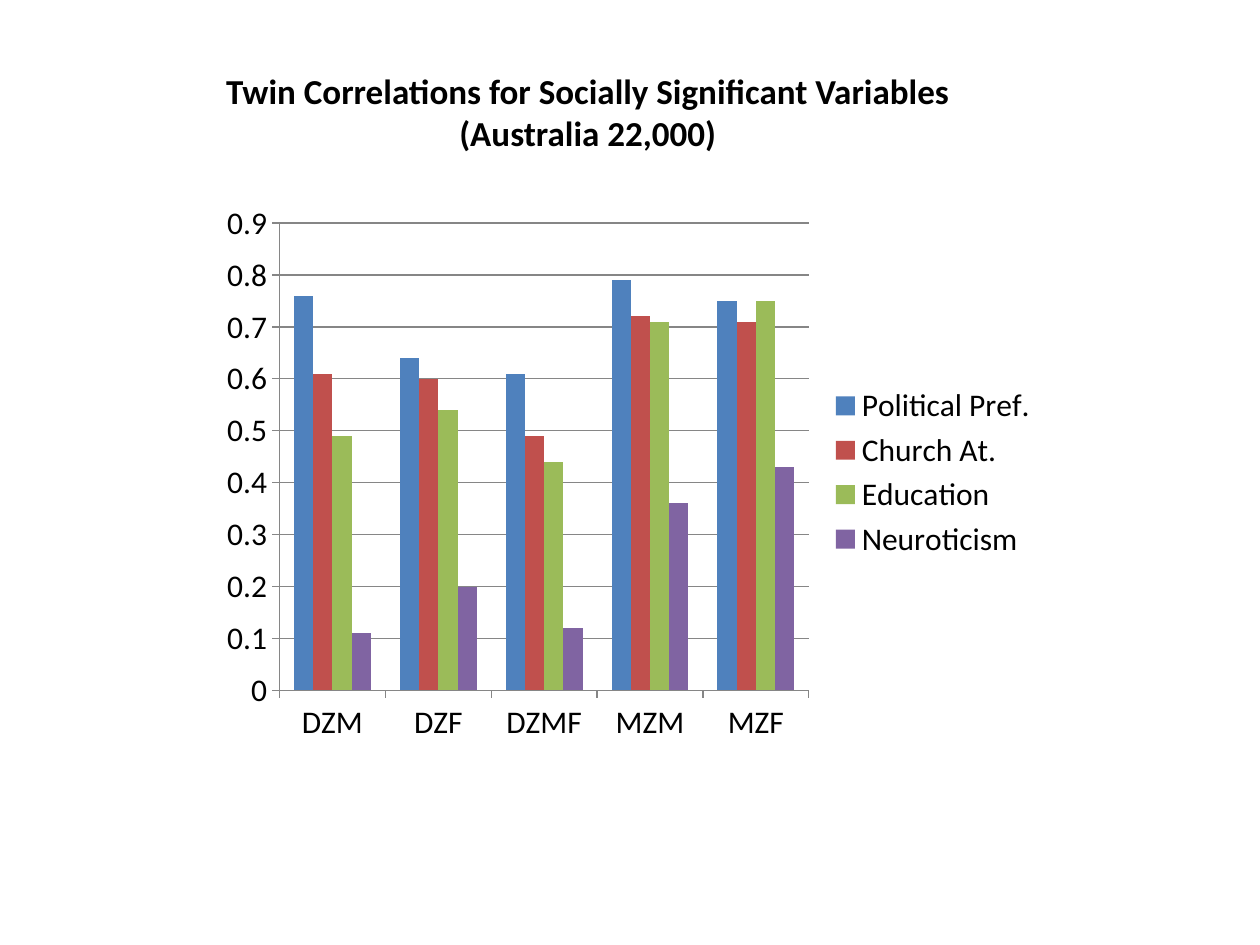
"""Build a slide with a clustered column chart of twin correlations."""
from dataclasses import dataclass

from pptx import Presentation
from pptx.chart.data import CategoryChartData as ChartData
from pptx.dml.color import RGBColor
from pptx.enum.chart import XL_CHART_TYPE as Kind
from pptx.enum.chart import XL_LEGEND_POSITION as Spot
from pptx.enum.chart import XL_TICK_MARK as Tick
from pptx.enum.text import MSO_AUTO_SIZE as Fit
from pptx.enum.text import PP_ALIGN as Align
from pptx.util import Inches, Pt

FONT = "Calibri"
BLACK = "000000"
GRAY = "868686"


@dataclass
class Trait:
    name: str
    color: str
    vals: tuple[float, ...]


TWINS = ("DZM", "DZF", "DZMF", "MZM", "MZF")
TRAITS = (
    Trait("Political Pref.", "4F81BD", (0.76, 0.64, 0.61, 0.79, 0.75)),
    Trait("Church At.", "C0504D", (0.61, 0.6, 0.49, 0.72, 0.71)),
    Trait("Education", "9BBB59", (0.49, 0.54, 0.44, 0.71, 0.75)),
    Trait("Neuroticism", "8064A2", (0.11, 0.2, 0.12, 0.36, 0.43)),
)
TITLE = ("Twin Correlations for Socially Significant Variables", "(Australia 22,000)")


def rgb(code: str) -> RGBColor:
    return RGBColor.from_string(code)


def set_font(font, size: int, bold: bool = False) -> None:
    font.name, font.size, font.bold = FONT, Pt(size), bold
    font.color.rgb = rgb(BLACK)


def set_line(line) -> None:
    line.color.rgb = rgb(GRAY)
    line.width = Pt(0.75)


def add_columns(slide) -> None:
    data = ChartData(number_format="General")
    data.categories = TWINS
    for trait in TRAITS:
        data.add_series(trait.name, trait.vals)
    chart = slide.shapes.add_chart(
        Kind.COLUMN_CLUSTERED,
        Inches(1.67), Inches(1.53), Inches(6.67), Inches(4.44), data,
    ).chart
    set_font(chart.font, 18)
    chart.has_title = False
    chart.has_legend = True
    chart.legend.position = Spot.RIGHT
    chart.legend.include_in_layout = False
    plot = chart.plots[0]
    plot.gap_width, plot.overlap, plot.vary_by_categories = 150, 0, False
    for trait, bars in zip(TRAITS, plot.series):
        bars.format.fill.solid()
        bars.format.fill.fore_color.rgb = rgb(trait.color)
    for axis in (chart.category_axis, chart.value_axis):
        axis.major_tick_mark, axis.minor_tick_mark = Tick.OUTSIDE, Tick.NONE
        set_line(axis.format.line)
    scale = chart.value_axis
    scale.minimum_scale, scale.maximum_scale, scale.major_unit = 0, 0.9, 0.1
    scale.has_major_gridlines = True
    set_line(scale.major_gridlines.format.line)


def add_title(slide) -> None:
    box = slide.shapes.add_textbox(Inches(1.67), Inches(0.5), Inches(5.99), Inches(0.77))
    frame = box.text_frame
    frame.word_wrap = False
    frame.auto_size = Fit.SHAPE_TO_FIT_TEXT
    for i, text in enumerate(TITLE):
        para = frame.add_paragraph() if i else frame.paragraphs[0]
        para.alignment = Align.CENTER
        run = para.add_run()
        run.text = text
        set_font(run.font, 20, True)


def main() -> None:
    deck = Presentation()
    deck.slide_width, deck.slide_height = Inches(10), Inches(7.5)
    slide = deck.slides.add_slide(deck.slide_layouts[6])
    add_columns(slide)
    add_title(slide)
    deck.save("out.pptx")


if __name__ == "__main__":
    main()
